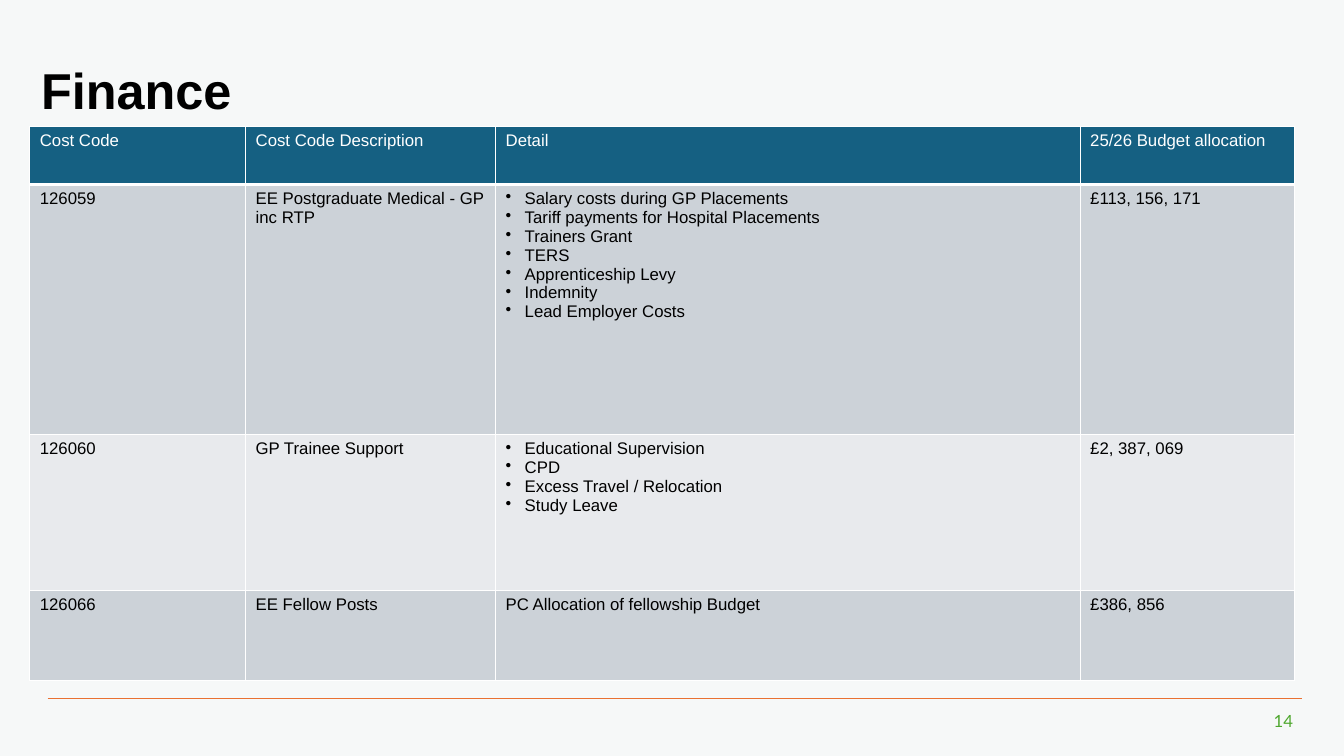
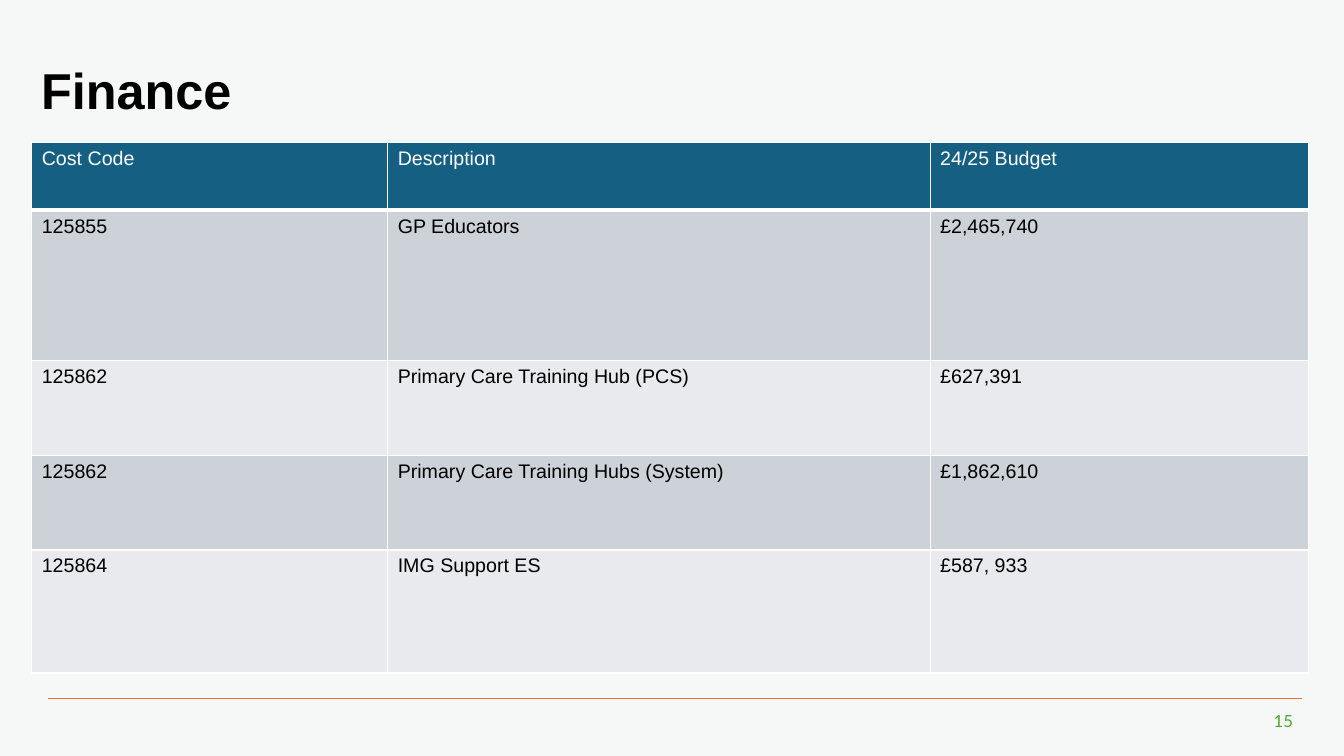
from lxml import etree
from pptx import Presentation
from pptx import util as u
from pptx.dml.color import RGBColor
from pptx.enum import shapes, text
from pptx.oxml import ns

PAPER = RGBColor(0xF6, 0xF8, 0xF8)
BLACK = RGBColor(0, 0, 0)
WHITE = RGBColor(0xFF, 0xFF, 0xFF)
HEADER_BLUE = RGBColor(0x15, 0x60, 0x82)
ROW_BANDS = [RGBColor(0xCC, 0xD2, 0xD8), RGBColor(0xE8, 0xEA, 0xED)]
RULE_ORANGE = RGBColor(0xE9, 0x71, 0x32)
NUMBER_GREEN = RGBColor(0x4E, 0xA7, 0x2E)
BULLET_INDENT = u.Cm(0.48)

# Content: a list in a cell becomes bullets; lengths in cm
budgets = [
    {
        "number": 14, "left": 0.75, "top": 3.19, "size": 12,
        "columns": [5.44, 6.3, 14.73, 5.41],
        "heights": [1.46, 6.3, 3.93, 2.26],
        "rows": [
            ["Cost Code", "Cost Code Description", "Detail", "25/26 Budget allocation"],
            ["126059", "EE Postgraduate Medical - GP inc RTP",
             ["Salary costs during GP Placements",
              "Tariff payments for Hospital Placements",
              "Trainers Grant", "TERS", "Apprenticeship Levy",
              "Indemnity", "Lead Employer Costs"],
             "£113, 156, 171"],
            ["126060", "GP Trainee Support",
             ["Educational Supervision", "CPD",
              "Excess Travel / Relocation", "Study Leave"],
             "£2, 387, 069"],
            ["126066", "EE Fellow Posts", "PC Allocation of fellowship Budget", "£386, 856"],
        ],
    },
    {
        "number": 15, "left": 0.8, "top": 3.6, "size": 14,
        "columns": [8.97, 13.67, 9.53],
        "heights": [1.7, 3.78, 2.39, 2.39, 3.1],
        "rows": [
            ["Cost Code", "Description", "24/25 Budget"],
            ["125855", "GP Educators", "£2,465,740"],
            ["125862", "Primary Care Training Hub (PCS)", "£627,391"],
            ["125862", "Primary Care Training Hubs (System)", "£1,862,610"],
            ["125864", "IMG Support ES", "£587, 933"],
        ],
    },
]


def style(paragraph, font, size, color, bold=False):
    paragraph.font.name = font
    paragraph.font.size = u.Pt(size)
    paragraph.font.color.rgb = color
    paragraph.font.bold = bold


def add_borders(cell, bottom_width):
    """White lines on all four sides, placed ahead of the cell fill."""
    properties = cell._tc.get_or_add_tcPr()
    widths = {"a:lnL": 1, "a:lnR": 1, "a:lnT": 1, "a:lnB": bottom_width}
    for position, (side, width) in enumerate(widths.items()):
        border = etree.Element(ns.qn(side), w=str(u.Pt(width)))
        fill = etree.SubElement(border, ns.qn("a:solidFill"))
        etree.SubElement(fill, ns.qn("a:srgbClr"), val=str(WHITE))
        properties.insert(position, border)


deck = Presentation()
deck.slide_width, deck.slide_height = u.Cm(33.87), u.Cm(19.05)

for budget in budgets:
    slide = deck.slides.add_slide(deck.slide_layouts[6])
    slide.background.fill.solid()
    slide.background.fill.fore_color.rgb = PAPER

    # Footer: page number and rule
    page_number = slide.shapes.add_textbox(
        u.Cm(31.8), u.Cm(17.78), u.Cm(1.04), u.Cm(0.77)).text_frame
    page_number.word_wrap = False
    page_number.auto_size = text.MSO_AUTO_SIZE.SHAPE_TO_FIT_TEXT
    page_number.text = str(budget["number"])
    page_number.paragraphs[0].alignment = text.PP_ALIGN.RIGHT
    style(page_number.paragraphs[0], "Lato", 12, NUMBER_GREEN)

    rule = slide.shapes.add_connector(
        shapes.MSO_CONNECTOR.STRAIGHT,
        u.Cm(1.2), u.Cm(17.6), u.Cm(32.8), u.Cm(17.6))
    rule.line.color.rgb = RULE_ORANGE
    rule.line.width = u.Pt(0.5)
    etree.SubElement(rule._element.spPr, ns.qn("a:effectLst"))

    # Title
    title = slide.shapes.add_textbox(
        u.Cm(1.04), u.Cm(1.14), u.Cm(31.67), u.Cm(2.41)).text_frame
    title.word_wrap = True
    title.vertical_anchor = text.MSO_ANCHOR.MIDDLE
    title.margin_left = title.margin_right = 0
    title.margin_top = title.margin_bottom = 0
    title.text = "Finance"
    title.paragraphs[0].line_spacing = 0.9
    style(title.paragraphs[0], "Arial", 36, BLACK, bold=True)

    # Budget table
    columns, heights = budget["columns"], budget["heights"]
    table = slide.shapes.add_table(
        len(heights), len(columns), u.Cm(budget["left"]), u.Cm(budget["top"]),
        u.Cm(sum(columns)), u.Cm(sum(heights))).table
    for column, width in zip(table.columns, columns):
        column.width = u.Cm(width)
    for row, height in zip(table.rows, heights):
        row.height = u.Cm(height)

    for r, entries in enumerate(budget["rows"]):
        is_header = r == 0
        for c, entry in enumerate(entries):
            cell = table.cell(r, c)
            cell.fill.solid()
            cell.fill.fore_color.rgb = HEADER_BLUE if is_header else ROW_BANDS[(r - 1) % 2]
            add_borders(cell, bottom_width=3 if is_header else 1)
            bulleted = isinstance(entry, list)
            cell.text = "\n".join(entry) if bulleted else entry
            for paragraph in cell.text_frame.paragraphs:
                style(paragraph, "Arial", budget["size"], WHITE if is_header else BLACK)
                if bulleted:
                    properties = paragraph._p.get_or_add_pPr()
                    properties.set("marL", str(BULLET_INDENT))
                    properties.set("indent", str(-BULLET_INDENT))
                    bullet = etree.Element(ns.qn("a:buChar"), char="•")
                    properties.insert(0, bullet)

deck.save("out.pptx")
